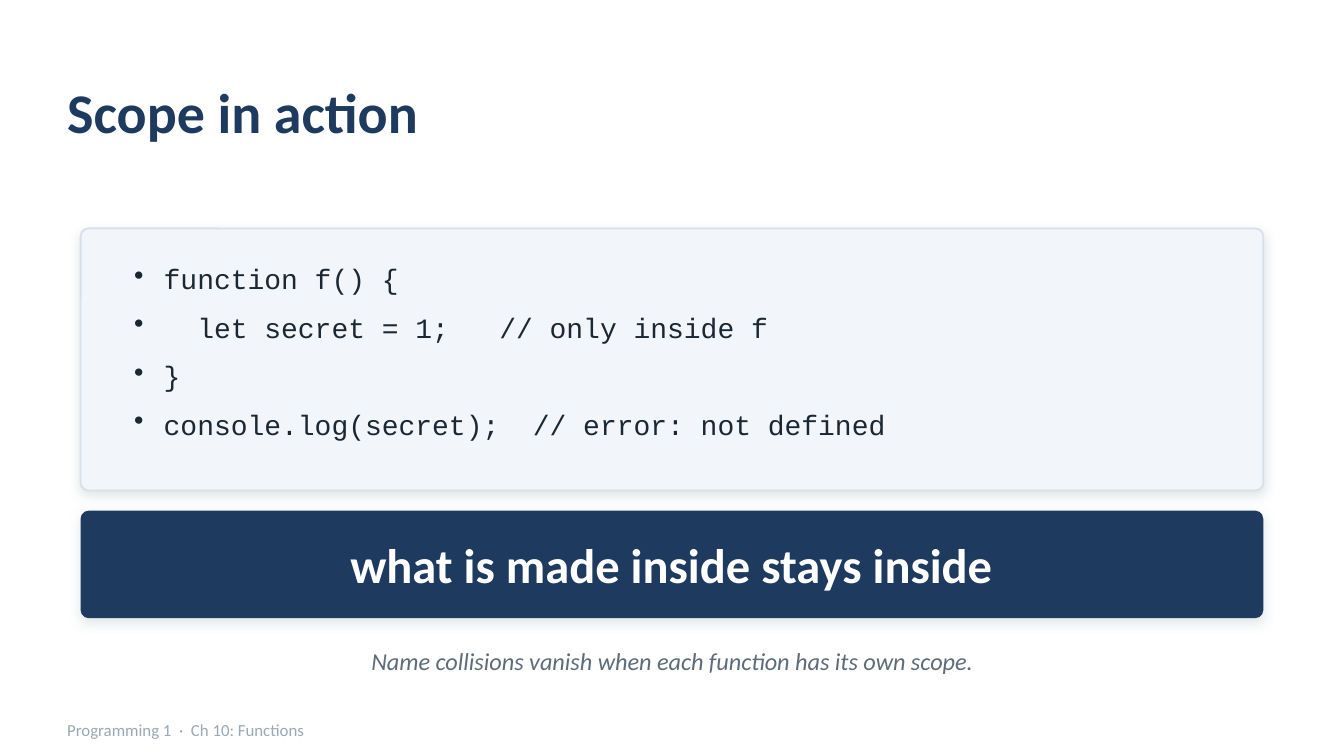
from dataclasses import dataclass

from lxml import etree
from pptx import Presentation
from pptx.dml.color import RGBColor
from pptx.enum.shapes import MSO_SHAPE
from pptx.enum.text import MSO_ANCHOR, PP_ALIGN
from pptx.oxml.ns import qn
from pptx.util import Pt

ROUND = MSO_SHAPE.ROUNDED_RECTANGLE
MIDDLE = MSO_ANCHOR.MIDDLE
TOP = MSO_ANCHOR.TOP
LEFT = PP_ALIGN.LEFT
CENTER = PP_ALIGN.CENTER
PX = 4572  # EMU per px, 200 px to the inch


@dataclass
class Theme:
    navy: str = "1F3A5F"
    ink: str = "1B2733"
    white: str = "FFFFFF"
    panel: str = "F2F5F9"
    edge: str = "D8E0E9"
    grey: str = "5E6B79"
    pale: str = "9AA8B6"
    body: str = "Calibri"
    mono: str = "Courier New"
    title: int = 30
    claim: int = 26
    code: int = 15
    note: int = 13
    foot: int = 9


theme = Theme()
deck = Presentation()
deck.slide_width, deck.slide_height = 2000 * PX, 1125 * PX
slide = deck.slides.add_slide(deck.slide_layouts[6])


def add_card(box, fill, adjust):
    """Add a rounded card with a soft shadow below it."""
    card = slide.shapes.add_shape(ROUND, *[n * PX for n in box])
    card.adjustments[0] = adjust
    card.fill.solid()
    card.fill.fore_color.rgb = RGBColor.from_string(fill)
    card.line.fill.background()
    card.shadow.inherit = False
    effects = card._element.spPr.find(qn("a:effectLst"))
    shade = etree.SubElement(effects, qn("a:outerShdw"), blurRad=str(Pt(6)),
                             dist=str(Pt(2)), dir="5400000", rotWithShape="0")
    color = etree.SubElement(shade, qn("a:srgbClr"), val=theme.pale)
    etree.SubElement(color, qn("a:alpha"), val="28000")
    return card


def add_text(box, text, face, size, color, align=LEFT, anchor=MIDDLE,
             inset=(0, 0), bold=False, italic=False):
    """Add a wrapped text box and format every run in it."""
    frame = slide.shapes.add_textbox(*[n * PX for n in box]).text_frame
    frame.word_wrap = True
    frame.vertical_anchor = anchor
    frame.margin_left = frame.margin_right = inset[0] * PX
    frame.margin_top = frame.margin_bottom = inset[1] * PX
    frame.text = text
    for para in frame.paragraphs:
        para.alignment = align
        for run in para.runs:
            run.font.name = face
            run.font.size = Pt(size)
            run.font.bold = bold
            run.font.italic = italic
            run.font.color.rgb = RGBColor.from_string(color)
    return frame


# Title
add_text((100, 80, 1800, 170), "Scope in action", theme.body, theme.title,
         theme.navy, bold=True)

# Code panel
panel = add_card((120, 340, 1760, 390), theme.panel, 0.03)
panel.line.color.rgb = RGBColor.from_string(theme.edge)
panel.line.width = Pt(1)

lines = [
    "function f() {",
    "  let secret = 1;   // only inside f",
    "}",
    "console.log(secret);  // error: not defined",
]
code = add_text((180, 380, 1640, 320), "\n".join(lines), theme.mono,
                theme.code, theme.ink, anchor=TOP, inset=(20, 10))
for para in code.paragraphs:
    props = para._p.get_or_add_pPr()
    props.set("marL", str(44 * PX))
    props.set("indent", str(-44 * PX))
    etree.SubElement(props, qn("a:buSzPct"), val="100000")
    etree.SubElement(props, qn("a:buChar"), char="•")
    para.space_after = Pt(8)

# Main claim
add_card((120, 760, 1760, 160), theme.navy, 0.075)
add_text((120, 766, 1760, 148), "what is made inside stays inside", theme.body,
         theme.claim, theme.white, align=CENTER, bold=True)

# Note and footer
add_text((120, 944, 1760, 80),
         "Name collisions vanish when each function has its own scope.",
         theme.body, theme.note, theme.grey, align=CENTER, italic=True)
add_text((100, 1060, 1600, 52), "Programming 1  ·  Ch 10: Functions",
         theme.body, theme.foot, theme.pale)

deck.save("out.pptx")
